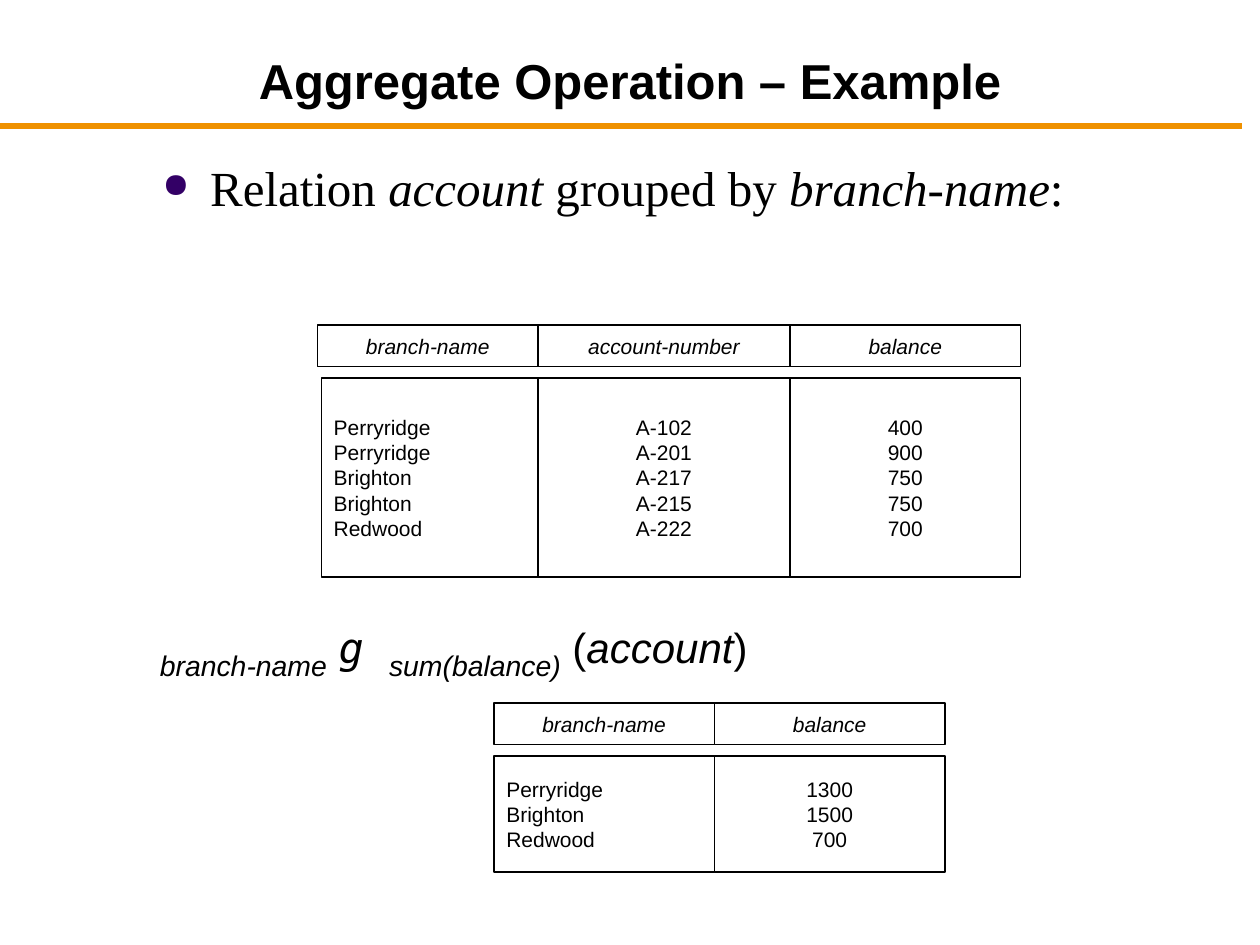
from dataclasses import dataclass

from lxml import etree
from pptx import Presentation
from pptx import util as u
from pptx.dml.color import RGBColor
from pptx.enum import shapes, text
from pptx.oxml import ns


@dataclass(frozen=True)
class Theme:
    ink: str = "000000"
    paper: str = "FFFFFF"
    rule: str = "EF9100"
    bullet: str = "330066"
    sans: str = "Arial"
    serif: str = "Times New Roman"
    mono: str = "DejaVu Sans Mono"
    heading: int = 28
    formula: int = 24
    cell: int = 12


@dataclass(frozen=True)
class Span:
    words: str
    italic: bool = False
    font: str | None = None
    size: int | None = None
    baseline: int = 0


@dataclass(frozen=True)
class Column:
    name: str
    width: float
    values: tuple[str, ...]
    centered: bool = True
    body_shift: float = 0


@dataclass(frozen=True)
class Relation:
    left: float
    top: float
    body_height: float
    columns: tuple[Column, ...]


THEME = Theme()
HEADER_HEIGHT = 0.33
BODY_OFFSET = 0.42

ACCOUNT = Relation(2.52, 2.58, 1.58, (
    Column("branch-name", 1.75,
           ("Perryridge", "Perryridge", "Brighton", "Brighton", "Redwood"),
           centered=False, body_shift=0.03),
    Column("account-number", 2, ("A-102", "A-201", "A-217", "A-215", "A-222")),
    Column("balance", 1.83, ("400", "900", "750", "750", "700")),
))
TOTALS = Relation(3.92, 5.58, 0.92, (
    Column("branch-name", 1.75, ("Perryridge", "Brighton", "Redwood"), centered=False),
    Column("balance", 1.83, ("1300", "1500", "700")),
))


def color(value: str) -> RGBColor:
    return RGBColor.from_string(value)


def write_text(box, lines, *, size: int, font: str = THEME.sans, bold: bool = False,
               centered: bool = False, anchor=text.MSO_ANCHOR.TOP) -> None:
    frame = box.text_frame
    frame.word_wrap = True
    frame.vertical_anchor = anchor
    for index, spans in enumerate(lines):
        para = frame.paragraphs[0] if index == 0 else frame.add_paragraph()
        para.alignment = text.PP_ALIGN.CENTER if centered else text.PP_ALIGN.LEFT
        for span in spans:
            run = para.add_run()
            run.text = span.words
            run.font.name = span.font or font
            run.font.size = u.Pt(span.size or size)
            run.font.bold = bold
            run.font.italic = span.italic
            run.font.color.rgb = color(THEME.ink)
            if span.baseline:
                run.font._element.set("baseline", str(span.baseline * 1000))


def add_text_box(page, left: float, top: float, width: float, height: float):
    return page.shapes.add_textbox(
        u.Inches(left), u.Inches(top), u.Inches(width), u.Inches(height))


def add_bullet(para) -> None:
    para.line_spacing = 0.9
    properties = para._p.get_or_add_pPr()
    properties.set("marL", str(u.Inches(0.38)))
    properties.set("indent", str(-u.Inches(0.38)))

    def add(parent, tag: str, **attributes: str):
        return etree.SubElement(parent, ns.qn(f"a:{tag}"), **attributes)

    add(add(properties, "spcBef"), "spcPct", val="20000")
    add(add(properties, "buClr"), "srgbClr", val=THEME.bullet)
    add(properties, "buSzPct", val="70000")
    add(properties, "buChar", char="●")


def add_rule(page) -> None:
    rule = page.shapes.add_connector(
        shapes.MSO_CONNECTOR.STRAIGHT,
        u.Inches(0), u.Inches(1), u.Inches(9.86), u.Inches(1))
    rule.line.color.rgb = color(THEME.rule)
    rule.line.width = u.Pt(3)
    etree.SubElement(rule._element.spPr, ns.qn("a:effectLst"))


def add_cell(page, left: float, top: float, width: float, height: float,
             lines, centered: bool) -> None:
    cell = page.shapes.add_shape(
        shapes.MSO_SHAPE.RECTANGLE,
        u.Inches(left), u.Inches(top), u.Inches(width), u.Inches(height))
    cell.shadow.inherit = False
    cell.fill.solid()
    cell.fill.fore_color.rgb = color(THEME.paper)
    cell.line.color.rgb = color(THEME.ink)
    cell.line.width = u.Pt(0.75)
    write_text(cell, lines, size=THEME.cell, centered=centered,
               anchor=text.MSO_ANCHOR.MIDDLE)


def add_relation(page, relation: Relation) -> None:
    left = relation.left
    for column in relation.columns:
        add_cell(page, left, relation.top, column.width, HEADER_HEIGHT,
                 [[Span(column.name, italic=True)]], True)
        add_cell(page, left + column.body_shift, relation.top + BODY_OFFSET,
                 column.width, relation.body_height,
                 [[Span(value)] for value in column.values], column.centered)
        left += column.width


def main() -> None:
    deck = Presentation()
    deck.slide_width, deck.slide_height = u.Inches(10), u.Inches(7.5)
    page = deck.slides.add_slide(deck.slide_layouts[6])

    add_rule(page)
    title = add_text_box(page, 0.75, 0.25, 8.5, 0.67)
    write_text(title, [[Span("Aggregate Operation – Example")]], size=THEME.heading,
               bold=True, centered=True, anchor=text.MSO_ANCHOR.BOTTOM)

    statement = add_text_box(page, 1.19, 1.25, 7.61, 0.38)
    write_text(statement, [[
        Span("Relation "), Span("account", italic=True), Span(" grouped by "),
        Span("branch-name", italic=True), Span(":"),
    ]], size=THEME.heading, font=THEME.serif)
    add_bullet(statement.text_frame.paragraphs[0])

    formula = add_text_box(page, 1.17, 4.83, 7.69, 0.45)
    subscript = dict(italic=True, size=THEME.heading, baseline=-25)
    write_text(formula, [[
        Span("branch-name", **subscript), Span(" "),
        Span("g ", italic=True, font=THEME.mono),
        Span("sum(balance)", **subscript),
        Span(" ("), Span("account", italic=True), Span(")"),
    ]], size=THEME.formula)

    for relation in (ACCOUNT, TOTALS):
        add_relation(page, relation)
    deck.save("out.pptx")


if __name__ == "__main__":
    main()
